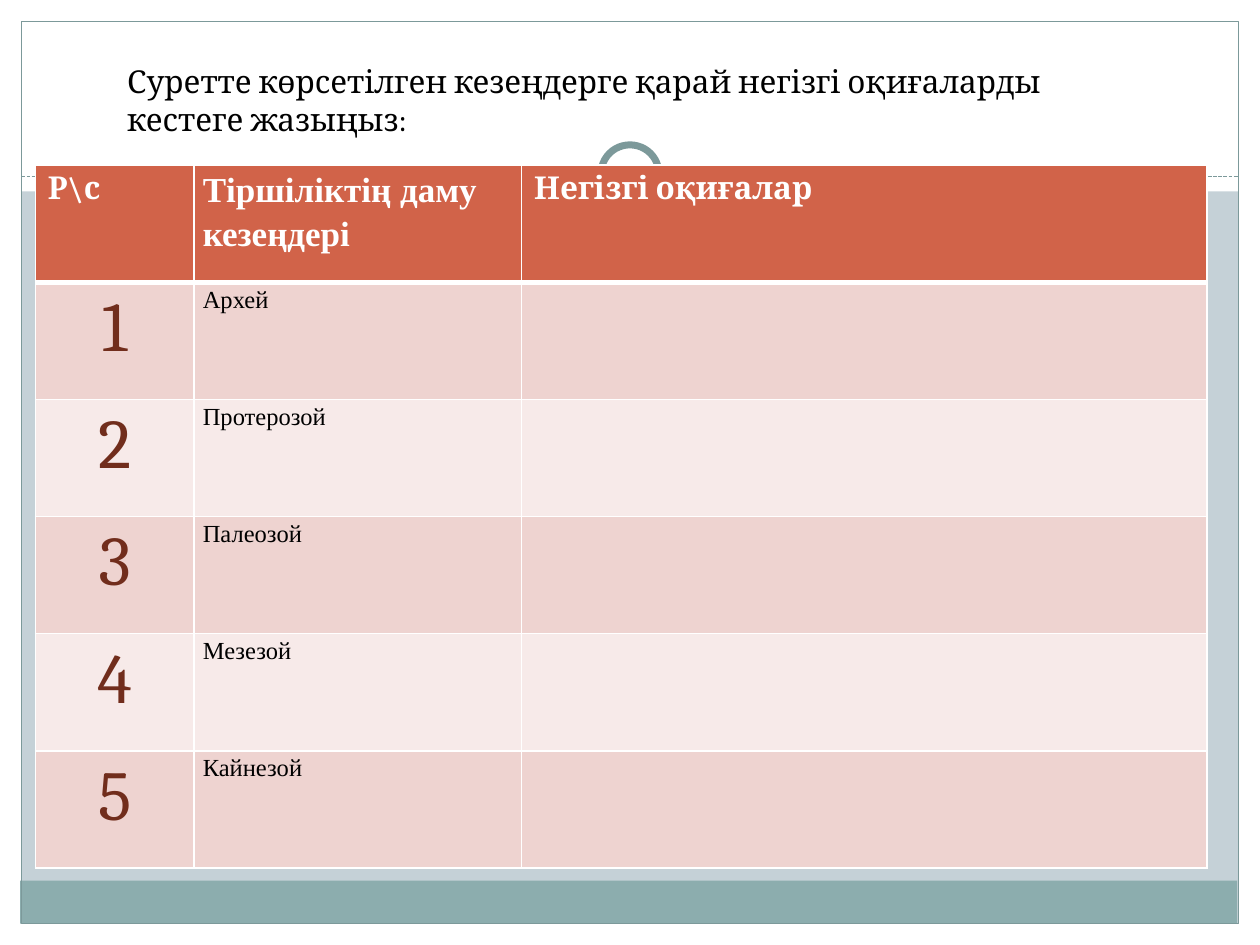
"""Build a slide with a table of the stages of life and their main events."""
import pptx
import pptx.dml.color
import pptx.enum.dml
import pptx.enum.shapes
import pptx.enum.text
import pptx.oxml
import pptx.oxml.ns
import pptx.util
from dataclasses import dataclass

Inches = pptx.util.Inches
Pt = pptx.util.Pt
RGB = pptx.dml.color.RGBColor.from_string
SHAPE = pptx.enum.shapes.MSO_SHAPE
ALIGN = pptx.enum.text.PP_ALIGN


@dataclass(frozen=True)
class Theme:
    back: str = "C5D1D7"
    white: str = "FFFFFF"
    black: str = "000000"
    band: str = "8CADAE"
    frame: str = "7C999A"
    header: str = "D16349"
    odd: str = "EED3D0"
    even: str = "F7EAE9"
    number: str = "712D1C"
    serif: str = "Cambria"
    times: str = "Times New Roman"
    text_size: int = 18
    stage_header_size: int = 20
    stage_size: int = 14
    number_size: int = 40


T = Theme()


def write(tf, text, font=T.serif, size=T.text_size, color=T.black, bold=False,
          align=ALIGN.LEFT, spacing=1.0):
    tf.word_wrap = True
    p = tf.paragraphs[0]
    p.alignment = align
    p.line_spacing = spacing
    r = p.add_run()
    r.text = text
    r.font.name = font
    r.font.size = Pt(size)
    r.font.bold = bold
    r.font.color.rgb = RGB(color)


def add_border(cell, side, width):
    cell._tc.get_or_add_tcPr().append(pptx.oxml.parse_xml(
        f'<a:{side} {pptx.oxml.ns.nsdecls("a")} w="{Pt(width)}"><a:solidFill>'
        f'<a:srgbClr val="{T.white}"/></a:solidFill></a:{side}>'))


prs = pptx.Presentation()
prs.slide_width = Inches(10)
prs.slide_height = Inches(7.5)
s = prs.slides.add_slide(prs.slide_layouts[5])
s.background.fill.solid()
s.background.fill.fore_color.rgb = RGB(T.back)

decor = [
    (SHAPE.RECTANGLE, 0, 7.33, 10, 0.17, T.white, None),
    (SHAPE.RECTANGLE, 0, 0, 10, 1.52, T.white, None),
    (SHAPE.RECTANGLE, 0, 0, 0.17, 7.5, T.white, None),
    (SHAPE.RECTANGLE, 9.83, 0, 0.17, 7.5, T.white, None),
    (SHAPE.RECTANGLE, 0.16, 6.99, 9.66, 0.34, T.band, None),
    (SHAPE.RECTANGLE, 0.17, 0.17, 9.66, 7.16, None, 0.75),
    (SHAPE.OVAL, 4.67, 1.05, 0.67, 0.67, T.white, None),
    (SHAPE.OVAL, 4.77, 1.15, 0.46, 0.46, T.white, 4),
]
for kind, x, y, w, h, fill, line in decor:
    if kind == SHAPE.OVAL and line is None:
        rule = s.shapes.add_connector(
            pptx.enum.shapes.MSO_CONNECTOR.STRAIGHT,
            Inches(0.17), Inches(1.4), Inches(9.83), Inches(1.4))
        rule.line.color.rgb = RGB(T.frame)
        rule.line.width = Pt(0.75)
        rule.line.dash_style = pptx.enum.dml.MSO_LINE.SQUARE_DOT
        rule.element.spPr.append(pptx.oxml.parse_xml(
            f'<a:effectLst {pptx.oxml.ns.nsdecls("a")}/>'))
    sp = s.shapes.add_shape(kind, Inches(x), Inches(y), Inches(w), Inches(h))
    sp.shadow.inherit = False
    if fill:
        sp.fill.solid()
        sp.fill.fore_color.rgb = RGB(fill)
    else:
        sp.fill.background()
    if line:
        sp.line.color.rgb = RGB(T.frame)
        sp.line.width = Pt(line)
    else:
        sp.line.fill.background()

columns = [1.26, 2.6, 5.44]
rows = [("Р\\с", "Тіршіліктің даму кезеңдері", "Негізгі оқиғалар")]
stages = ["Архей", "Протерозой", "Палеозой", "Мезезой", "Кайнезой"]
rows += [(str(n), stage, "") for n, stage in enumerate(stages, 1)]

table = s.shapes.add_table(len(rows), len(columns), Inches(0.28), Inches(1.31),
                           Inches(9.3), Inches(5.59)).table
for column, width in zip(table.columns, columns):
    column.width = Inches(width)

header_formats = [
    dict(color=T.white, bold=True),
    dict(color=T.white, bold=True, font=T.times, size=T.stage_header_size, spacing=1.15),
    dict(color=T.white, bold=True),
]
body_formats = [
    dict(color=T.number, size=T.number_size, align=ALIGN.CENTER),
    dict(font=T.times, size=T.stage_size, spacing=1.15),
    dict(),
]
for i, texts in enumerate(rows):
    table.rows[i].height = Inches(0.93)
    formats = body_formats if i else header_formats
    for j, text in enumerate(texts):
        cell = table.cell(i, j)
        if j == 1:
            cell.margin_left = cell.margin_right = Inches(0.07)
            cell.margin_top = cell.margin_bottom = 0
        for side in ("lnL", "lnR", "lnT", "lnB"):
            thick = (i, side) in ((0, "lnB"), (1, "lnT"))
            add_border(cell, side, 3 if thick else 1)
        cell.fill.solid()
        cell.fill.fore_color.rgb = RGB((T.odd if i % 2 else T.even) if i else T.header)
        if text:
            write(cell.text_frame, text, **formats[j])

title = s.shapes.title
title.left, title.top = Inches(0.91), Inches(0.44)
title.width, title.height = Inches(8.03), Inches(0.71)
title.text_frame.auto_size = pptx.enum.text.MSO_AUTO_SIZE.NONE
title.text_frame.vertical_anchor = pptx.enum.text.MSO_ANCHOR.TOP
write(title.text_frame,
      "Суретте көрсетілген кезеңдерге қарай негізгі оқиғаларды кестеге жазыңыз:")
title.element.getparent().append(title.element)

prs.save("out.pptx")
